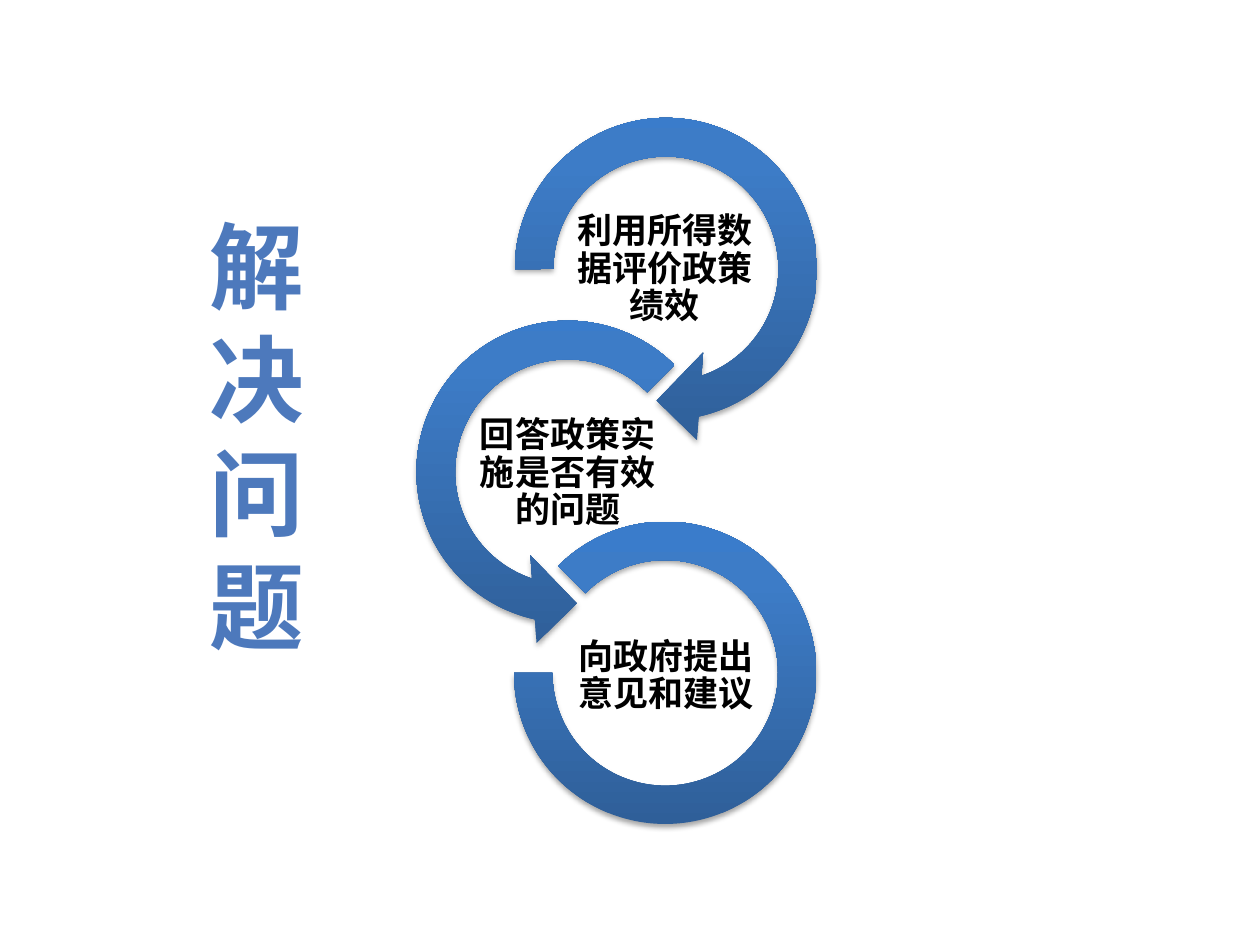
"""Build a slide with a three-step circular arrow chain beside a vertical heading."""
from dataclasses import dataclass
from lxml.etree import SubElement
from pptx import Presentation
from pptx.dml.color import RGBColor
from pptx.enum.shapes import MSO_SHAPE
from pptx.enum.text import MSO_ANCHOR, MSO_AUTO_SIZE, PP_ALIGN
from pptx.oxml.ns import qn
from pptx.util import Inches, Pt


@dataclass(frozen=True)
class Theme:
    ring: tuple = ((0, "2F5F99"), (80, "3D7CC7"), (100, "3A7CCB"))
    heading: tuple = ((0, "7494C9"), (49, "4D79BC"), (50, "346AAA"), (92, "325F94"), (100, "315D91"))
    label: str = "000000"
    shadow: str = "000000"
    label_font: str = "Calibri"
    heading_font: str = "Noto Sans CJK JP"
    label_size: int = 20
    heading_size: int = 54


def apply_gradient(fill, properties, stops, angle):
    fill.gradient()
    fill.gradient_angle = angle
    stop_list = properties.find(qn("a:gradFill")).find(qn("a:gsLst"))
    stop_list.clear()
    for position, color in stops:
        stop = SubElement(stop_list, qn("a:gs"), pos=str(position * 1000))
        SubElement(stop, qn("a:srgbClr"), val=color)


def add_text(slide, box, lines, frame_format, font_format):
    frame = slide.shapes.add_textbox(*map(Inches, box)).text_frame
    for name, value in frame_format.items():
        setattr(frame, name, value)
    frame.text = "\n".join(lines)
    for paragraph in frame.paragraphs:
        paragraph.alignment = PP_ALIGN.CENTER
        for name, value in font_format.items():
            setattr(paragraph.runs[0].font, name, value)
    return frame


theme = Theme()
presentation = Presentation()
presentation.slide_width, presentation.slide_height = Inches(10), Inches(7.5)
slide = presentation.slides.add_slide(presentation.slide_layouts[6])

steps = [
    (MSO_SHAPE.CIRCULAR_ARROW, (3.89, 0.74, 2.79), (0.11, 11.42, 45, 108, 0.125),
     (4.5, 1.75), "利用所得数据评价政策绩效"),
    (MSO_SHAPE.LEFT_CIRCULAR_ARROW, (3.11, 2.35, 2.79), (0.11, 11.42, 63, 189, 0.125),
     (3.73, 3.37), "回答政策实施是否有效的问题"),
    (MSO_SHAPE.BLOCK_ARC, (4.08, 4.14, 2.4), (135, 108, 0.127),
     (4.51, 4.98), "向政府提出意见和建议"),
]
label_frame = {"word_wrap": True, "vertical_anchor": MSO_ANCHOR.MIDDLE}
label_frame |= {f"margin_{side}": Inches(0.01) for side in ("left", "top", "right", "bottom")}
label_font = {"name": theme.label_font, "size": Pt(theme.label_size), "bold": True}

for preset, (left, top, size), adjustments, label_corner, label in steps:
    ring = slide.shapes.add_shape(preset, *map(Inches, (left, top, size, size)))
    for index, value in enumerate(adjustments):
        ring.adjustments[index] = value
    ring.line.fill.background()
    ring.shadow.inherit = False
    properties = ring._element.spPr
    apply_gradient(ring.fill, properties, theme.ring, 90)
    shadow = SubElement(properties.find(qn("a:effectLst")), qn("a:outerShdw"), blurRad=str(Pt(3.1)),
                        dist=str(Pt(1.8)), dir="5400000", rotWithShape="0")
    shadow_color = SubElement(shadow, qn("a:srgbClr"), val=theme.shadow)
    SubElement(shadow_color, qn("a:alpha"), val="35000")

    frame = add_text(slide, (*label_corner, 1.55, 0.78), [label], label_frame, label_font)
    frame.paragraphs[0].line_spacing = 0.9
    frame.paragraphs[0].runs[0].font.color.rgb = RGBColor.from_string(theme.label)

heading = add_text(
    slide, (1.56, 1.6, 0.96, 3.74), "解决问题",
    {"word_wrap": False, "auto_size": MSO_AUTO_SIZE.SHAPE_TO_FIT_TEXT},
    {"name": theme.heading_font, "size": Pt(theme.heading_size), "bold": True})
for paragraph in heading.paragraphs:
    run = paragraph.runs[0]
    apply_gradient(run.font.fill, run._r.rPr, theme.heading, 270)

presentation.save("out.pptx")
